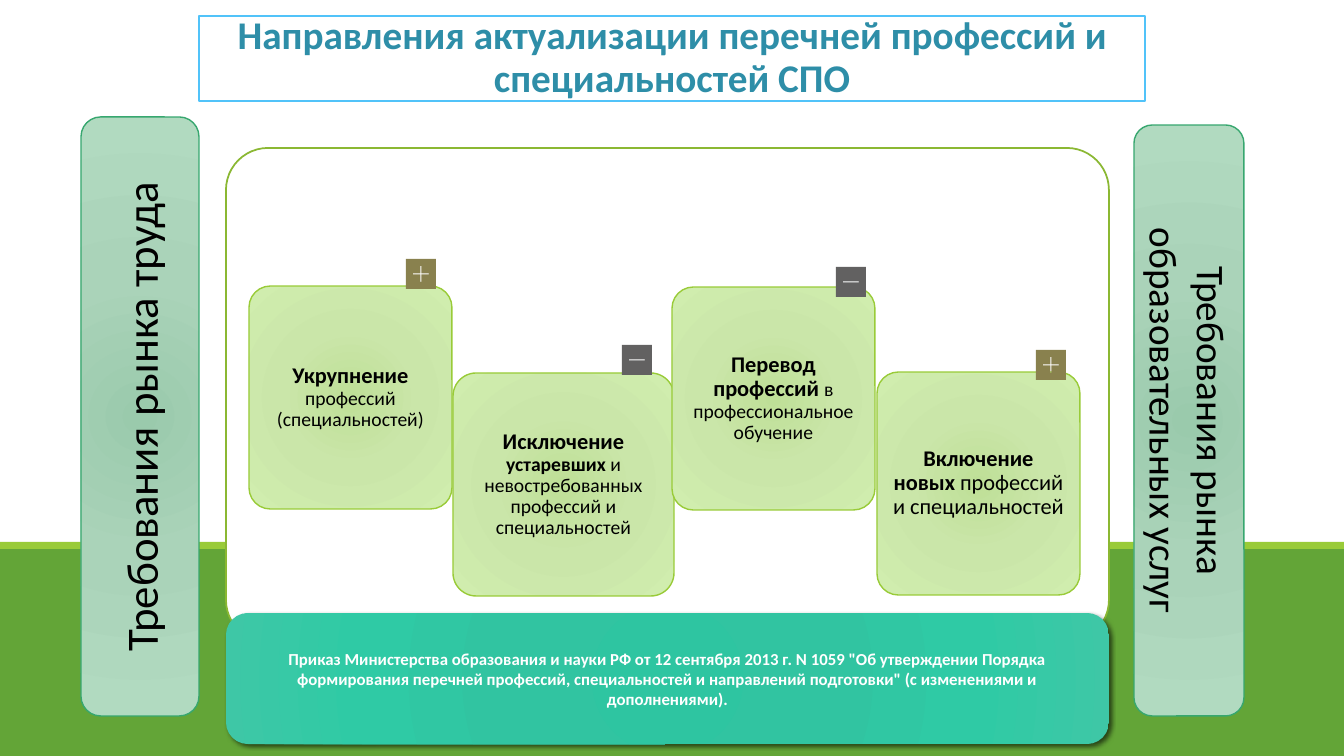
from lxml import etree
from pptx import Presentation
from pptx.dml.color import RGBColor
from pptx.enum import shapes, text
from pptx.oxml import ns
from pptx.util import Pt

# Content
FONT = "Calibri"
TITLE = "Направления актуализации перечней профессий и специальностей СПО"
ORDER = ('Приказ Министерства образования и науки РФ от 12 сентября 2013 г. N 1059 '
         '"Об утверждении Порядка формирования перечней профессий, специальностей и '
         'направлений подготовки" (с изменениями и дополнениями).')

# (text, size, bold) runs; "\n" is a line break
CARDS = [
    {"box": (249, 286, 203, 223), "badge": (406, 259), "sign": "plus",
     "runs": [("Укрупнение ", 16, True), ("профессий (специальностей)", 14, False)]},
    {"box": (453, 373, 221, 223), "badge": (622, 345), "sign": "minus",
     "runs": [("Исключение ", 16, True), ("устаревших ", 14, True),
              ("и невостребованных профессий и специальностей", 14, False)]},
    {"box": (672, 287, 203, 223), "badge": (836, 267), "sign": "minus",
     "runs": [("Перевод профессий ", 16, True),
              ("в профессиональное обучение", 14, False)]},
    {"box": (877, 372, 203, 223), "badge": (1036, 350), "sign": "plus",
     "runs": [("Включение", 16, True), ("\n", 16, True), ("новых ", 16, True),
              ("профессий и специальностей", 16, False)]},
]
# box, text, size, text direction
SIDES = [
    ((1134, 125, 110, 591), "Требования рынка образовательных услуг", 28, "vert"),
    ((81, 117, 118, 599), "Требования рынка труда", 32, "vert270"),
]

# Colours
WHITE = RGBColor(0xFF, 0xFF, 0xFF)
BLACK = RGBColor(0x00, 0x00, 0x00)
GROUND = RGBColor(0x63, 0xA5, 0x37)
LIME = RGBColor(0x99, 0xCB, 0x38)
PANEL_LINE = RGBColor(0x8B, 0xB8, 0x33)
TITLE_LINE = RGBColor(0x51, 0xC3, 0xF9)
TITLE_TEXT = RGBColor(0x2E, 0x8E, 0xA8)
SIDE_LINE = RGBColor(0x37, 0xA7, 0x6F)
SIGN_COLOURS = {"plus": RGBColor(0x89, 0x81, 0x4E), "minus": RGBColor(0x62, 0x61, 0x61)}
CARD_STOPS = [(0, RGBColor(0xBE, 0xDF, 0x97)), (45, RGBColor(0xCA, 0xE6, 0xA9)),
              (100, RGBColor(0xD0, 0xED, 0xAE))]
SIDE_STOPS = [(0, RGBColor(0x9A, 0xCA, 0xAC)), (45, RGBColor(0xAA, 0xD3, 0xB9)),
              (100, RGBColor(0xB1, 0xDA, 0xC0))]
ORDER_STOPS = [(0, RGBColor(0x2E, 0xC5, 0xA1)), (34, RGBColor(0x31, 0xC4, 0xA1)),
               (70, RGBColor(0x2F, 0xCA, 0xA5)), (100, RGBColor(0x3E, 0xC7, 0xA6))]

RECT = shapes.MSO_SHAPE.RECTANGLE
ROUND = shapes.MSO_SHAPE.ROUNDED_RECTANGLE
BADGE = 30
ARM = 8  # half length of a sign's stroke


def px(value):
    return round(value * 914400 / 100.8)


presentation = Presentation()
presentation.slide_width, presentation.slide_height = px(1344), px(756)
slide = presentation.slides.add_slide(presentation.slide_layouts[6])


def fill_radial(shape, stops):
    """Fill a shape with a gradient running out from its centre."""
    shape.fill.background()
    empty = shape.element.spPr.find(ns.qn("a:noFill"))
    gradient = etree.Element(ns.qn("a:gradFill"), rotWithShape="1")
    stop_list = etree.SubElement(gradient, ns.qn("a:gsLst"))
    for position, colour in stops:
        stop = etree.SubElement(stop_list, ns.qn("a:gs"), pos=str(position * 1000))
        etree.SubElement(stop, ns.qn("a:srgbClr"), val=str(colour))
    circle = etree.SubElement(gradient, ns.qn("a:path"), path="circle")
    etree.SubElement(circle, ns.qn("a:fillToRect"), {side: "100000" for side in "ltrb"})
    empty.getparent().replace(empty, gradient)


def add_box(kind, box, fill, line=None, width=1, corner=None):
    shape = slide.shapes.add_shape(kind, *map(px, box))
    if corner is not None:
        shape.adjustments[0] = corner
    if isinstance(fill, list):
        fill_radial(shape, fill)
    else:
        shape.fill.solid()
        shape.fill.fore_color.rgb = fill
    if line is None:
        shape.line.fill.background()
    else:
        shape.line.color.rgb = line
        shape.line.width = Pt(width)
    shape.shadow.inherit = False
    return shape


def write(shape, runs, colour, spacing=None, insets=(10, 5),
          anchor=text.MSO_ANCHOR.MIDDLE):
    frame = shape.text_frame
    frame.word_wrap = True
    frame.vertical_anchor = anchor
    frame.margin_left = frame.margin_right = px(insets[0])
    frame.margin_top = frame.margin_bottom = px(insets[1])
    paragraph = frame.paragraphs[0]
    paragraph.alignment = text.PP_ALIGN.CENTER
    paragraph.line_spacing = spacing
    paragraph.font.name = FONT
    paragraph.font.color.rgb = colour
    for words, size, bold in runs:
        if words == "\n":
            paragraph.add_line_break()
            continue
        run = paragraph.add_run()
        run.text = words
        run.font.size = Pt(size)
        run.font.bold = bold


def add_badge(left, top, sign):
    """Draw a square with a plus or minus cut out of it."""
    middle, thin = BADGE / 2, 0.5
    near, far = middle - ARM, middle + ARM
    low, high = middle - thin, middle + thin
    square = [(0, 0), (BADGE, 0), (BADGE, BADGE), (0, BADGE)]
    cuts = {
        "minus": [(near, low), (near, high), (far, high), (far, low)],
        "plus": [(near, low), (near, high), (low, high), (low, far), (high, far),
                 (high, high), (far, high), (far, low), (high, low), (high, near),
                 (low, near), (low, low)],
    }
    outlines = [[(px(left + x), px(top + y)) for x, y in points]
                for points in (square, cuts[sign])]
    builder = slide.shapes.build_freeform(*outlines[0][0])
    builder.add_line_segments(outlines[0][1:], close=True)
    builder.move_to(*outlines[1][0])
    builder.add_line_segments(outlines[1][1:], close=True)
    badge = builder.convert_to_shape()
    badge.fill.solid()
    badge.fill.fore_color.rgb = SIGN_COLOURS[sign]
    badge.line.fill.background()
    badge.shadow.inherit = False


# Background
add_box(RECT, (0, 546, 1344, 210), GROUND)
add_box(RECT, (0, 542, 1344, 7), LIME)

# Panel with cards
add_box(ROUND, (226, 148, 883, 494), WHITE, PANEL_LINE, 1.25, 0.085)
for card in CARDS:
    shape = add_box(ROUND, card["box"], CARD_STOPS, LIME, corner=0.105)
    write(shape, card["runs"], BLACK, spacing=0.9, insets=(7, 7))

# Title
title = add_box(RECT, (199, 16, 946, 85), WHITE, TITLE_LINE)
write(title, [(TITLE, 28, True)], TITLE_TEXT, spacing=0.9, insets=(10, 0),
      anchor=text.MSO_ANCHOR.TOP)

# Side columns
for box, words, size, direction in SIDES:
    side = add_box(ROUND, box, SIDE_STOPS, SIDE_LINE)
    write(side, [(words, size, False)], BLACK)
    side.text_frame._txBody.bodyPr.set("vert", direction)

# Order banner with its shadow
banner = add_box(ROUND, (226, 613, 883, 131), ORDER_STOPS)
write(banner, [(ORDER, 12, True)], WHITE)
effects = banner.element.spPr.find(ns.qn("a:effectLst"))
shadow = etree.SubElement(effects, ns.qn("a:outerShdw"), blurRad=str(Pt(3.5)),
                          dist=str(Pt(2)), dir="2700000", rotWithShape="0")
shadow_colour = etree.SubElement(shadow, ns.qn("a:srgbClr"), val=str(BLACK))
etree.SubElement(shadow_colour, ns.qn("a:alpha"), val="60000")

# Badges
for card in CARDS:
    add_badge(*card["badge"], card["sign"])

presentation.save("out.pptx")
